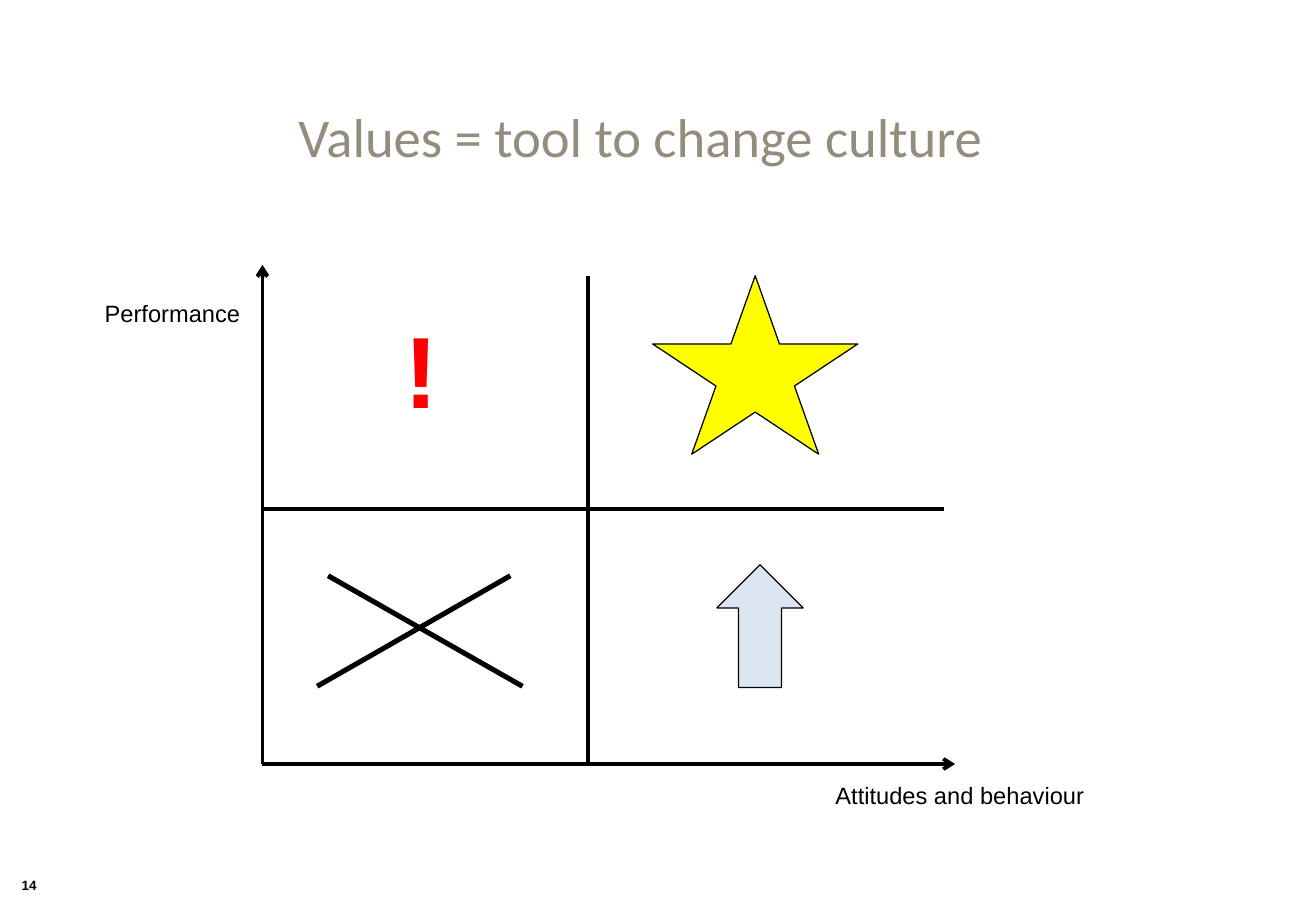
from lxml import etree
from pptx import Presentation
from pptx.dml.color import RGBColor
from pptx.enum.shapes import MSO_CONNECTOR, MSO_SHAPE
from pptx.enum.text import MSO_ANCHOR, PP_ALIGN
from pptx.oxml.ns import qn
from pptx.util import Inches, Pt

BLACK = RGBColor(0x00, 0x00, 0x00)
RED = RGBColor(0xFF, 0x00, 0x00)
YELLOW = RGBColor(0xFF, 0xFF, 0x00)
PALE_BLUE = RGBColor(0xDC, 0xE6, 0xF2)
TAUPE = RGBColor(0x95, 0x8D, 0x7C)

STRAIGHT = MSO_CONNECTOR.STRAIGHT
STAR = MSO_SHAPE.STAR_5_POINT
UP_ARROW = MSO_SHAPE.UP_ARROW
LEFT, CENTER = PP_ALIGN.LEFT, PP_ALIGN.CENTER
TOP, MIDDLE, BOTTOM = MSO_ANCHOR.TOP, MSO_ANCHOR.MIDDLE, MSO_ANCHOR.BOTTOM

HAIRLINE, AXIS_WIDTH, CROSS_WIDTH = 0, 2.25, 3
AXIS_X, AXIS_Y = 2.16, 6.29
MIDDLE_X, MIDDLE_Y = 4.84, 4.19
CROSS_TOP, CROSS_BOTTOM = 4.74, 5.65


def add_text(shapes, text, box, size, color=BLACK, font="Arial", bold=False,
             align=CENTER, anchor=TOP, wrap=True):
    shape = shapes.add_textbox(*map(Inches, box))
    frame = shape.text_frame
    frame.text = text
    frame.word_wrap = wrap
    frame.vertical_anchor = anchor
    paragraph = frame.paragraphs[0]
    paragraph.alignment = align
    run_font = paragraph.runs[0].font
    run_font.name = font
    run_font.size = Pt(size)
    run_font.bold = bold
    run_font.color.rgb = color


def add_line(shapes, start, end, width, arrow=False):
    connector = shapes.add_connector(STRAIGHT, *map(Inches, start + end))
    connector.line.color.rgb = BLACK
    connector.line.width = Pt(width)
    if arrow:
        line = connector.line._get_or_add_ln()
        etree.SubElement(line, qn("a:tailEnd"), type="arrow")
    etree.SubElement(connector._element.spPr, qn("a:effectLst"))


def add_symbol(shapes, kind, box, color):
    shape = shapes.add_shape(kind, *map(Inches, box))
    shape.shadow.inherit = False
    shape.fill.solid()
    shape.fill.fore_color.rgb = color
    shape.line.color.rgb = BLACK
    shape.line.width = Pt(HAIRLINE)


def add_matrix(shapes):
    origin = (AXIS_X, AXIS_Y)
    add_line(shapes, origin, (7.86, AXIS_Y), AXIS_WIDTH, arrow=True)
    add_line(shapes, origin, (AXIS_X, 2.18), AXIS_WIDTH, arrow=True)
    add_line(shapes, (AXIS_X, MIDDLE_Y), (7.77, MIDDLE_Y), HAIRLINE)
    add_line(shapes, (MIDDLE_X, AXIS_Y), (MIDDLE_X, 2.27), HAIRLINE)
    add_symbol(shapes, STAR, (5.37, 2.27, 1.69, 1.47), YELLOW)
    add_line(shapes, (2.7, CROSS_TOP), (4.3, CROSS_BOTTOM), CROSS_WIDTH)
    add_line(shapes, (2.61, CROSS_BOTTOM), (4.2, CROSS_TOP), CROSS_WIDTH)
    add_text(shapes, "!", (3.05, 2.47, 0.84, 1.11), 60, RED, bold=True,
             anchor=BOTTOM)
    add_symbol(shapes, UP_ARROW, (5.9, 4.65, 0.71, 1.01), PALE_BLUE)


def main():
    presentation = Presentation()
    presentation.slide_width = Inches(10.83)
    presentation.slide_height = Inches(7.5)
    slide = presentation.slides.add_slide(presentation.slide_layouts[6])
    shapes = slide.shapes
    add_text(shapes, "Values = tool to change culture", (0.53, 0.78, 9.48, 0.68),
             32.4, TAUPE, "Calibri", anchor=MIDDLE)
    add_text(shapes, "Performance", (0.76, 2.41, 1.32, 0.34), 14, wrap=False)
    add_text(shapes, "Attitudes and behaviour", (6.77, 6.38, 2.26, 0.34), 14,
             wrap=False)
    add_matrix(shapes.add_group_shape().shapes)
    add_text(shapes, "14", (0.08, 7.17, 2.26, 0.25), 8, bold=True, align=LEFT)
    presentation.save("out.pptx")


if __name__ == "__main__":
    main()
